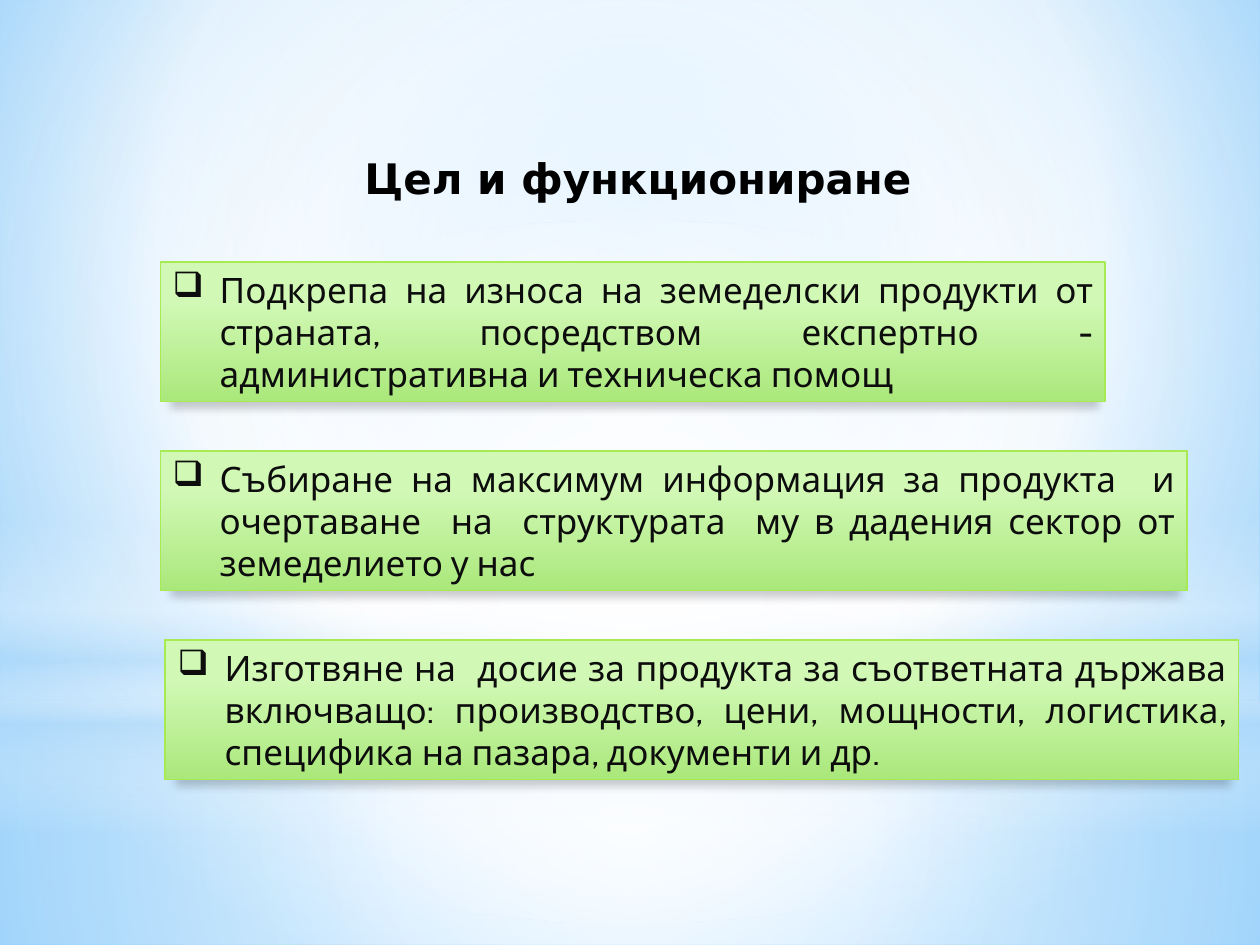
from lxml.etree import SubElement
from pptx import Presentation
from pptx.dml.color import RGBColor as Rgb
from pptx.enum.shapes import MSO_SHAPE as Shape
from pptx.enum.text import MSO_ANCHOR as Anchor, MSO_AUTO_SIZE as AutoSize, PP_ALIGN as Align
from pptx.oxml.ns import qn
from pptx.util import Cm, Pt

WIDTH, HEIGHT = 25.4, 19.05
COLORS = {
    "white": "FFFFFF", "sky": "9ED5FF", "blue": "5BB9FF", "haze": "B4DCFA",
    "light": "D1F8B5", "green": "AAE87B", "border": "A7EA52",
    "black": "000000", "ink": "0D0D0D",
}
CENTER = (50, 50, 50, 50)
GOALS = [
    (3.23, 19.05, "Подкрепа на износа на земеделски продукти от страната, посредством "
                  "експертно - административна и техническа помощ"),
    (3.23, 20.7, "Събиране на максимум информация за продукта  и очертаване  на  структурата  "
                 "му в дадения сектор от земеделието у нас"),
    (3.33, 21.64, "Изготвяне на  досие за продукта за съответната държава включващо: "
                  "производство, цени, мощности, логистика, специфика на пазара, документи и др."),
]


def assign(target, values):
    for name, value in values.items():
        setattr(target, name, value)


def add_node(parent, tag, **attributes):
    return SubElement(parent, qn(tag), {name: str(value) for name, value in attributes.items()})


def add_color(parent, color, opacity):
    node = add_node(parent, "a:srgbClr", val=COLORS[color])
    if opacity < 100:
        add_node(node, "a:alpha", val=opacity * 1000)


class GoalsSlide:
    frame_format = {"word_wrap": True, "auto_size": AutoSize.NONE}
    title_para = {"alignment": Align.CENTER, "line_spacing": 1.15, "space_after": Pt(10)}
    title_fonts = [
        (" ", {"size": Pt(28), "name": "Cabin"}),
        ("Цел и функциониране", {"size": Pt(24), "name": "DejaVu Sans", "bold": True}),
    ]
    goal_font = {"size": Pt(20), "name": "Cabin"}

    def __init__(self, deck):
        self.page = deck.slides.add_slide(deck.slide_layouts[6])

    def gradient(self, fill, element, stops, focus=None):
        fill.gradient()
        node = next(element.iter(qn("a:gradFill")))
        for child in list(node):
            node.remove(child)
        stop_list = add_node(node, "a:gsLst")
        for position, color, opacity in stops:
            add_color(add_node(stop_list, "a:gs", pos=position * 1000), color, opacity)
        if focus:
            circle = add_node(node, "a:path", path="circle")
            sides = {side: value * 1000 for side, value in zip("ltrb", focus)}
            add_node(circle, "a:fillToRect", **sides)
        else:
            add_node(node, "a:lin", ang=5400000, scaled=0)

    def background(self, stops, focus):
        self.gradient(self.page.background.fill, self.page.element, stops, focus)

    def panel(self, kind, left, top, width, height, stops, focus=None):
        box = self.page.shapes.add_shape(kind, Cm(left), Cm(top), Cm(width), Cm(height))
        self.gradient(box.fill, box.element.spPr, stops, focus)
        box.shadow.inherit = False
        box.line.fill.background()
        return box

    def add_span(self, para, text, font, color):
        span = para.add_run()
        span.text = text
        assign(span.font, font)
        span.font.color.rgb = Rgb.from_string(COLORS[color])

    def title(self, left, top, width, height):
        box = self.page.shapes.add_textbox(Cm(left), Cm(top), Cm(width), Cm(height))
        assign(box.text_frame, self.frame_format)
        para = box.text_frame.paragraphs[0]
        assign(para, self.title_para)
        for text, font in self.title_fonts:
            self.add_span(para, text, font, "black")

    def drop_shadow(self, box):
        effects = box.element.spPr.find(qn("a:effectLst"))
        shadow = add_node(effects, "a:outerShdw", blurRad=int(Pt(5)), dist=int(Pt(4)),
                          dir=5400000, sx=98000, sy=98000, algn="t", rotWithShape=0)
        add_color(shadow, "black", 20)

    def goal(self, left, top, width, height, text):
        box = self.panel(Shape.RECTANGLE, left, top, width, height,
                         [(28, "light", 100), (100, "green", 100)])
        box.line.color.rgb = Rgb.from_string(COLORS["border"])
        box.line.width = Pt(0.75)
        self.drop_shadow(box)
        assign(box.text_frame, {**self.frame_format, "vertical_anchor": Anchor.TOP})
        para = box.text_frame.paragraphs[0]
        para.alignment = Align.JUSTIFY
        properties = para._p.get_or_add_pPr()
        indent = int(Cm(0.95))
        properties.set("marL", str(indent))
        properties.set("indent", str(-indent))
        add_node(properties, "a:buChar", char="❑")
        self.add_span(para, text, self.goal_font, "ink")


def main():
    deck = Presentation()
    assign(deck, {"slide_width": Cm(WIDTH), "slide_height": Cm(HEIGHT)})
    slide = GoalsSlide(deck)
    slide.background([(0, "sky", 100), (60, "white", 100), (100, "blue", 100)], (20, 10, 20, 60))
    horizon = 14.17
    slide.panel(Shape.RECTANGLE, 0, horizon, WIDTH, HEIGHT - horizon,
                [(0, "white", 91), (37, "white", 76), (100, "haze", 79)], CENTER)
    slide.panel(Shape.RECTANGLE, 0, 0, WIDTH, horizon,
                [(0, "white", 89), (48, "white", 62), (100, "haze", 79)], CENTER)
    slide.panel(Shape.RECTANGLE, 0, 10.46, WIDTH, 6.35,
                [(0, "white", 0), (29, "white", 30), (45, "haze", 40),
                 (55, "white", 26), (65, "haze", 60), (100, "white", 0)])
    slide.panel(Shape.OVAL, 0, 4.45, WIDTH, horizon,
                [(0, "white", 100), (56, "white", 0)], CENTER)
    slide.title(5.28, 2.64, 14.94, 1.55)
    for row, (left, width, text) in enumerate(GOALS):
        slide.goal(left, 5.28 + 3.81 * row, width, 2.82, text)
    deck.save("out.pptx")


if __name__ == "__main__":
    main()
